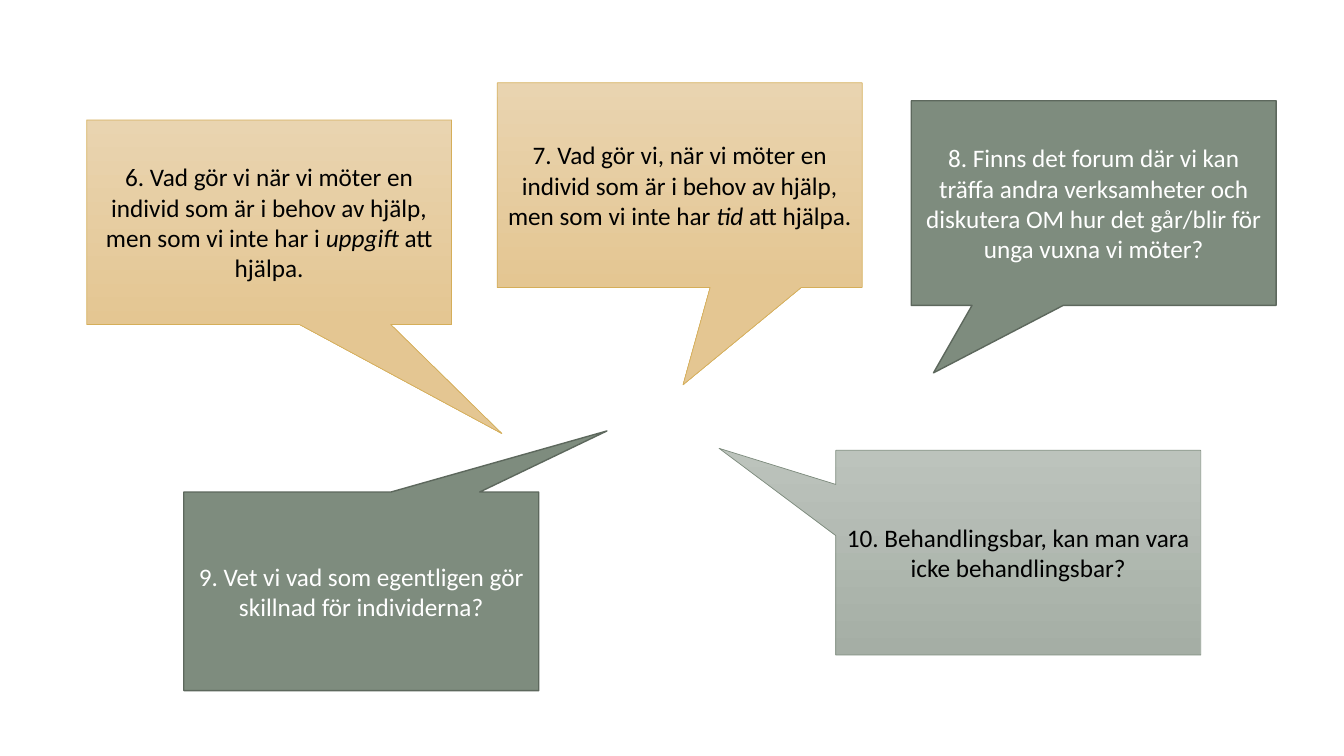
from pptx import Presentation
from pptx import util as u
from pptx.dml.color import RGBColor
from pptx.enum import shapes, text

BLACK = RGBColor(0x00, 0x00, 0x00)
WHITE = RGBColor(0xFF, 0xFF, 0xFF)
SAND_LIGHT = RGBColor(0xE9, 0xD4, 0xB0)
SAND = RGBColor(0xE4, 0xC6, 0x92)
SAND_EDGE = RGBColor(0xD5, 0xAE, 0x59)
SAGE_PALE = RGBColor(0xBC, 0xC3, 0xBC)
SAGE_LIGHT = RGBColor(0xA5, 0xAE, 0xA5)
SAGE = RGBColor(0x7E, 0x8C, 0x7E)
SAGE_EDGE = RGBColor(0x5D, 0x68, 0x5D)

SAND_STYLE = {"fill": (SAND_LIGHT, SAND), "edge": SAND_EDGE, "weight": 0.5, "ink": BLACK}
PALE_STYLE = {"fill": (SAGE_PALE, SAGE_LIGHT), "edge": SAGE, "weight": 0.5, "ink": BLACK}
SAGE_STYLE = {"fill": (SAGE,), "edge": SAGE_EDGE, "weight": 1, "ink": WHITE}

WIDTH, HEIGHT = 260.64, 146.16
QUESTIONS = [
    ((61.9, 85.7, WIDTH, HEIGHT), (0.638, 1.033), SAND_STYLE,
     ("6. Vad gör vi när vi möter en individ som är i behov av hjälp, men som vi inte har i ",
      "uppgift", " att hjälpa.")),
    ((131.3, 351.5, 253.6, 141.8), (0.692, -0.808), SAGE_STYLE,
     ("9. Vet vi vad som egentligen gör skillnad för individerna?",)),
    ((650.9, 72, WIDTH, HEIGHT), (-0.439, 0.83), SAGE_STYLE,
     ("8. Finns det forum där vi kan träffa andra verksamheter och diskutera OM hur det "
      "går/blir för unga vuxna vi möter?",)),
    ((597, 321.7, WIDTH, HEIGHT), (-0.82, -0.51), PALE_STYLE,
     ("10. Behandlingsbar, kan man vara icke behandlingsbar?",)),
    ((355.2, 59.2, WIDTH, HEIGHT), (0.009, 0.976), SAND_STYLE,
     ("7. Vad gör vi, när vi möter en individ som är i behov av hjälp, men som vi inte har ",
      "tid", " att hjälpa.")),
]


def apply_fill(fill, colours):
    if len(colours) == 1:
        fill.solid()
        fill.fore_color.rgb = colours[0]
        return
    fill.gradient()
    fill.gradient_angle = 270
    for stop, colour in zip(fill.gradient_stops, colours):
        stop.color.rgb = colour


def write_question(frame, parts, ink):
    frame.word_wrap = True
    frame.vertical_anchor = text.MSO_ANCHOR.MIDDLE
    para = frame.paragraphs[0]
    para.alignment = text.PP_ALIGN.CENTER
    for index, part in enumerate(parts):
        span = para.add_run()
        span.text = part
        formats = {"name": "Calibri", "size": u.Pt(18), "italic": index == 1}
        for name, value in formats.items():
            setattr(span.font, name, value)
        span.font.color.rgb = ink


def add_callout(page, box, tip, style, parts):
    callout = page.shapes.add_shape(
        shapes.MSO_SHAPE.RECTANGULAR_CALLOUT, *(u.Pt(length) for length in box))
    callout.shadow.inherit = False
    for index, offset in enumerate(tip):
        callout.adjustments[index] = offset
    apply_fill(callout.fill, style["fill"])
    callout.line.color.rgb = style["edge"]
    callout.line.width = u.Pt(style["weight"])
    write_question(callout.text_frame, parts, style["ink"])


def add_question_page(deck):
    page = deck.slides.add_slide(deck.slide_layouts[6])
    for question in QUESTIONS:
        add_callout(page, *question)


def main():
    deck = Presentation()
    deck.slide_width = u.Pt(960)
    deck.slide_height = u.Pt(540)
    add_question_page(deck)
    deck.save("out.pptx")


if __name__ == "__main__":
    main()
